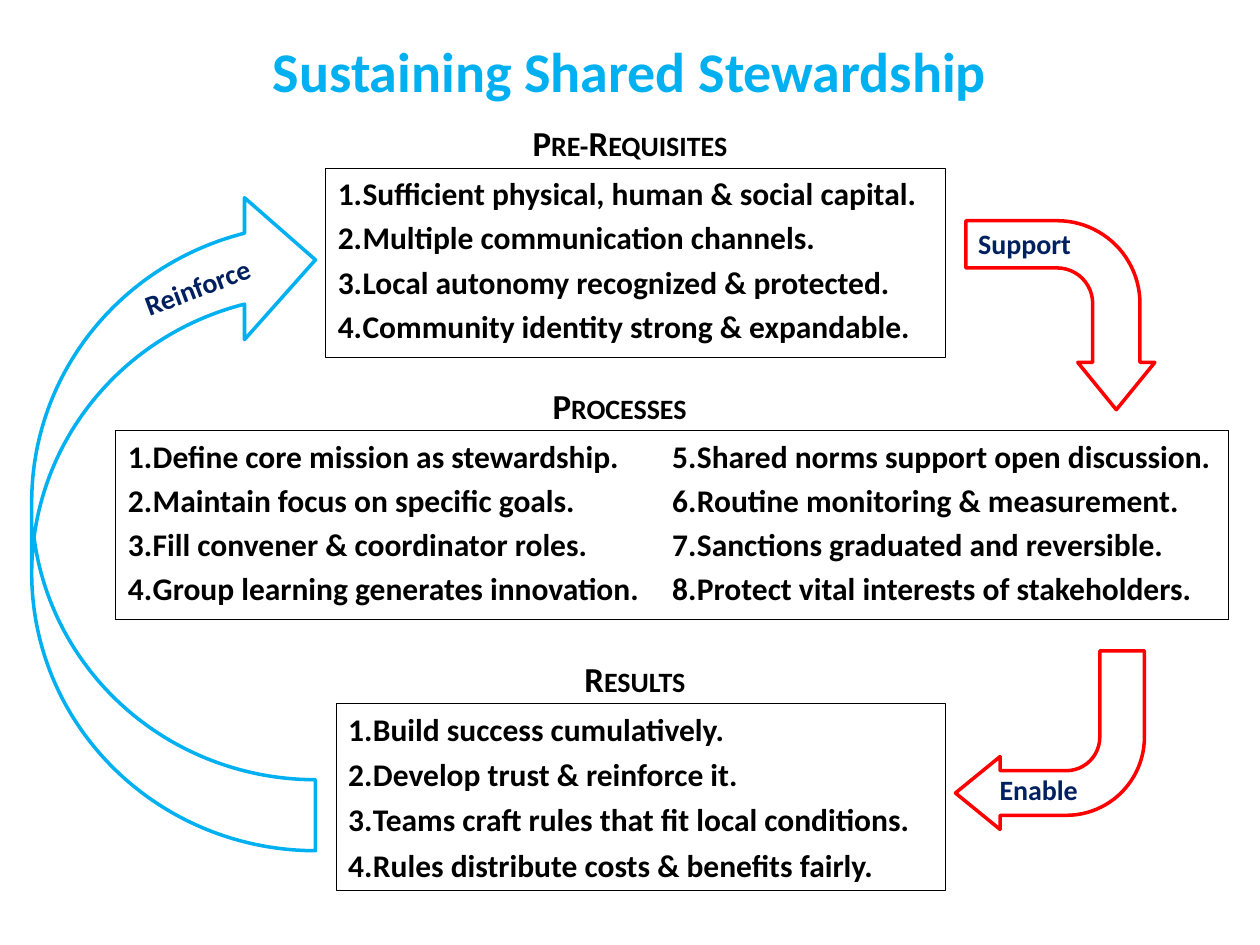
from dataclasses import dataclass

from lxml.etree import SubElement
from pptx import Presentation
from pptx.dml.color import RGBColor
from pptx.enum.shapes import MSO_SHAPE as Preset
from pptx.enum.text import MSO_ANCHOR as Anchor, PP_ALIGN as Align
from pptx.oxml.ns import qn
from pptx.util import Cm, Pt


@dataclass(frozen=True)
class Theme:
    font: str = "Calibri"
    black: str = "000000"
    sky: str = "00B0F0"
    red: str = "FF0000"
    navy: str = "002060"
    title: int = 32
    heading: int = 20
    body: int = 18
    label: int = 16


THEME = Theme()
HEADING_RISE, HEADING_WIDTH, HEADING_HEIGHT = 1.06, 8.9, 1.12
LABEL_SIZE = (2.75, 0.94)
BEND = (0.25, 0.204, 0.25, 0.438)


def set_values(target, values):
    for name, value in values.items():
        setattr(target, name, value)


def style_text(paragraph, size, color):
    set_values(paragraph.font, {"name": THEME.font, "size": Pt(size), "bold": True})
    paragraph.font.color.rgb = RGBColor.from_string(color)


def add_text(slide, box, text, size, color, align=Align.LEFT):
    shape = slide.shapes.add_textbox(*map(Cm, box))
    shape.text_frame.word_wrap = True
    paragraph = shape.text_frame.paragraphs[0]
    paragraph.text = text
    paragraph.alignment = align
    style_text(paragraph, size, color)
    return shape


def add_outline(slide, preset, box, color, width):
    shape = slide.shapes.add_shape(preset, *map(Cm, box))
    shape.shadow.inherit = False
    shape.fill.background()
    shape.line.color.rgb = RGBColor.from_string(color)
    shape.line.width = Pt(width)
    return shape


def add_title(slide, box, text):
    shape = add_text(slide, box, text, THEME.title, THEME.sky, Align.CENTER)
    shape.text_frame.vertical_anchor = Anchor.MIDDLE
    shape.text_frame.paragraphs[0].line_spacing = Pt(40)


def add_panel(slide, box, heading, heading_center, items, gap=3.6, columns=1):
    left, top, width, height = box

    # Small-caps heading above the frame
    heading_box = (heading_center - HEADING_WIDTH / 2, top - HEADING_RISE,
                   HEADING_WIDTH, HEADING_HEIGHT)
    caption = add_text(slide, heading_box, heading, THEME.heading, THEME.black, Align.CENTER)
    caption.text_frame.paragraphs[0].runs[0].font._element.set("cap", "small")

    # Framed numbered list
    frame = add_outline(slide, Preset.RECTANGLE, box, THEME.black, 0.25).text_frame
    set_values(frame, {"word_wrap": True, "vertical_anchor": Anchor.TOP})
    if columns > 1:
        frame._txBody.bodyPr.set("numCol", str(columns))
    for index, item in enumerate(items):
        paragraph = frame.add_paragraph() if index else frame.paragraphs[0]
        paragraph.text = item
        paragraph.alignment = Align.LEFT
        paragraph.space_before = Pt(gap if index else 0)
        properties = paragraph._p.get_or_add_pPr()
        properties.set("marL", str(Cm(0.5)))
        properties.set("indent", str(Cm(-0.5)))
        SubElement(properties, qn("a:buFont"), typeface="+mj-lt")
        SubElement(properties, qn("a:buAutoNum"), type="arabicPeriod")
        style_text(paragraph, THEME.body, THEME.black)


def add_labelled_arrow(slide, preset, box, color, label, label_offset,
                       rotation=0, flipped=False, label_rotation=0, adjustments=()):
    arrow = add_outline(slide, preset, box, color, 2)
    arrow.rotation = rotation
    for index, value in enumerate(adjustments):
        arrow.adjustments[index] = value
    if flipped:
        arrow._element.spPr.xfrm.set("flipV", "1")
    label_box = (box[0] + label_offset[0], box[1] + label_offset[1], *LABEL_SIZE)
    add_text(slide, label_box, label, THEME.label, THEME.navy).rotation = label_rotation


def main():
    presentation = Presentation()
    set_values(presentation, {"slide_width": Cm(25.4), "slide_height": Cm(19.05)})
    slide = presentation.slides.add_slide(presentation.slide_layouts[6])

    add_title(slide, (1.27, 0.64, 22.86, 1.48), "Sustaining Shared Stewardship")

    # Three stages, top to bottom
    add_panel(slide, (6.56, 3.39, 12.49, 3.81), "Pre-Requisites", 12.7, [
        "Sufficient physical, human & social capital.",
        "Multiple communication channels.",
        "Local autonomy recognized & protected.",
        "Community identity strong & expandable.",
    ])
    add_panel(slide, (2.33, 8.68, 22.44, 3.81), "Processes", 12.49, [
        "Define core mission as stewardship.",
        "Maintain focus on specific goals.",
        "Fill convener & coordinator roles.",
        "Group learning generates innovation.",
        "Shared norms support open discussion.",
        "Routine monitoring & measurement.",
        "Sanctions graduated and reversible.",
        "Protect vital interests of stakeholders.",
    ], columns=2)
    add_panel(slide, (6.77, 14.18, 12.28, 3.77), "Results", 12.8, [
        "Build success cumulatively.",
        "Develop trust & reinforce it.",
        "Teams craft rules that fit local conditions.",
        "Rules distribute costs & benefits fairly.",
    ], gap=4.3)

    # Arrows that link the stages into a cycle
    add_labelled_arrow(slide, Preset.BENT_ARROW, (19.47, 4.45, 3.81, 3.81), THEME.red,
                       "Support", (0, 0), rotation=90, adjustments=BEND)
    add_labelled_arrow(slide, Preset.BENT_ARROW, (19.26, 13.12, 3.81, 3.6), THEME.red,
                       "Enable", (0.64, 2.33), rotation=180, adjustments=BEND)
    add_labelled_arrow(slide, Preset.CURVED_RIGHT_ARROW, (0.64, 3.81, 5.72, 13.34), THEME.sky,
                       "Reinforce", (1.98, 1.5), flipped=True, label_rotation=339.5)

    presentation.save("out.pptx")


if __name__ == "__main__":
    main()
